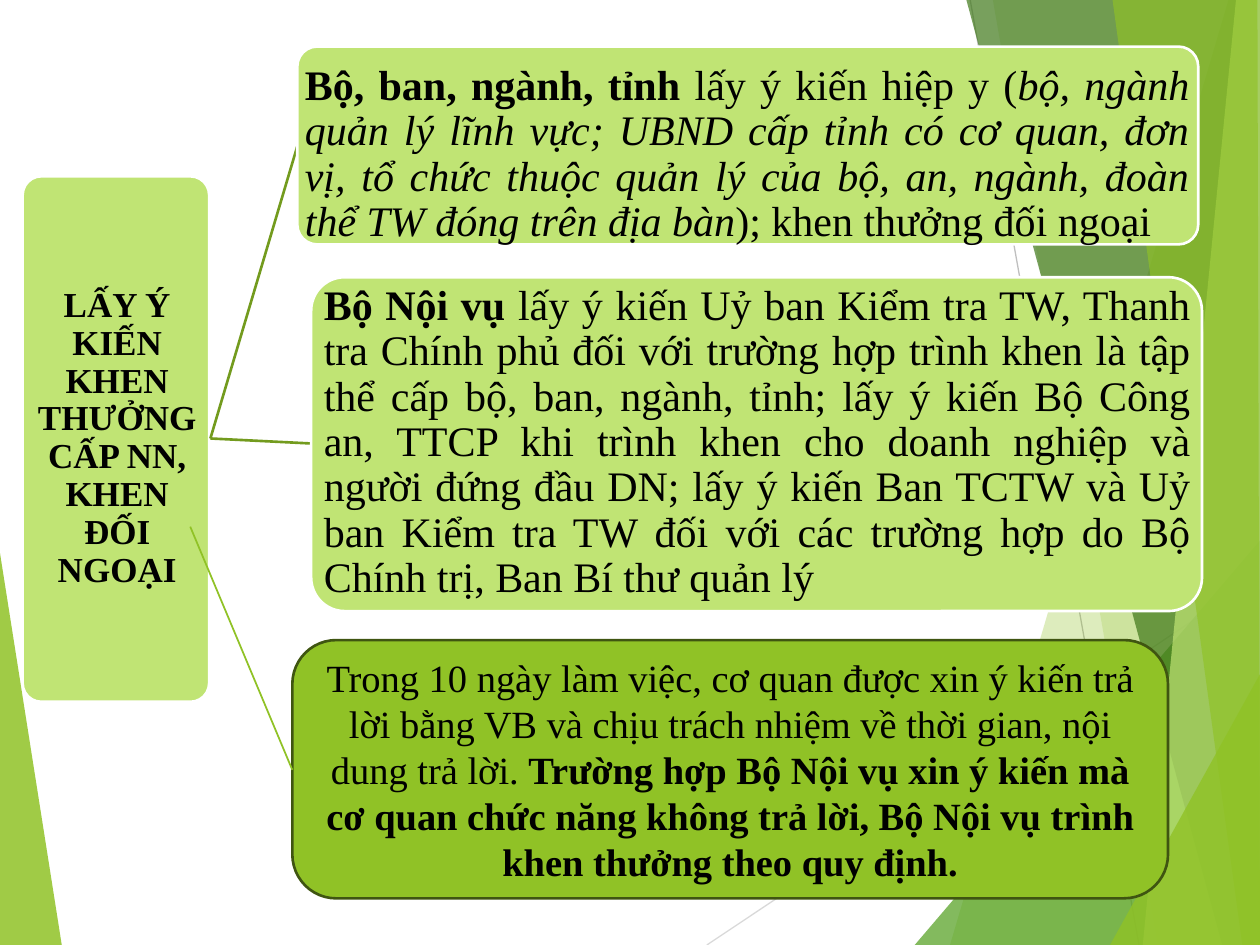
from lxml import etree
from pptx import Presentation
from pptx.dml.color import RGBColor
from pptx.enum.shapes import MSO_CONNECTOR as CONN, MSO_SHAPE as SHAPE
from pptx.enum.text import MSO_ANCHOR as ANCHOR, MSO_AUTO_SIZE as AUTO, PP_ALIGN as ALIGN
from pptx.oxml.ns import qn
from pptx.util import Inches, Pt

W, H = 10, 7.5
FONT = "Times New Roman"
C = {"green": "90C226", "light": "C0E474", "leaf": "54A021", "forest": "3F7819",
     "link": "739B1E", "edge": "3F5511", "white": "FFFFFF", "black": "000000",
     "gray": "BFBFBF", "pale": "D9D9D9"}

# Content: runs are (text, style), style "b" bold, "i" italic, "" regular
HEADING = [("LẤY Ý KIẾN KHEN THƯỞNG CẤP NN, KHEN ĐỐI NGOẠI", "b")]
MINISTRIES = [
    ("Bộ, ban, ngành, tỉnh ", "b"),
    ("lấy ý kiến hiệp y (", ""),
    ("bộ, ngành quản lý lĩnh vực; UBND cấp tỉnh có cơ quan, đơn vị, tổ chức thuộc "
     "quản lý của bộ, an, ngành, đoàn thể TW đóng trên địa bàn", "i"),
    ("); khen thưởng đối ngoại", ""),
]
HOME_AFFAIRS = [
    ("Bộ Nội vụ ", "b"),
    ("lấy ý kiến Uỷ ban Kiểm tra TW, Thanh tra Chính phủ đối với trường hợp trình "
     "khen là tập thể cấp bộ, ban, ngành, tỉnh; lấy ý kiến Bộ Công an, TTCP khi "
     "trình khen cho doanh nghiệp và người đứng đầu DN; lấy ý kiến Ban TCTW và Uỷ "
     "ban Kiểm tra TW đối với các trường hợp do Bộ Chính trị, Ban Bí thư quản lý", ""),
]
DEADLINE = [
    ("Trong 10 ngày làm việc, cơ quan được xin ý kiến trả lời bằng VB và chịu trách "
     "nhiệm về thời gian, nội dung trả lời. ", ""),
    ("Trường hợp Bộ Nội vụ xin ý kiến mà cơ quan chức năng không trả lời, Bộ Nội vụ "
     "trình khen thưởng theo quy định.", "b"),
]

# Background: thin rays (from, to, colour) and facets (points, colour, opacity %)
RAYS = [((5.61, H), (W, 4.57), "pale"), ((7.7, 0), (9.04, H), "gray")]
LEFT_FACET = ([(0, 4.39), (0.49, H), (0, H)], "green", 85)
RIGHT_FACETS = [
    ([(9.75, 0), (7.54, H), (W, H), (W, 0)], "green", 30),
    ([(7.88, 0), (9.19, H), (W, H), (W, 0)], "green", 20),
    ([(7.26, H), (W, 4.29), (W, H)], "leaf", 72),
    ([(7.67, 0), (9.7, H), (W, H), (W, 0)], "forest", 70),
    ([(9.81, 0), (9.07, H), (W, H), (W, 0)], "light", 70),
    ([(8.83, 0), (9.86, H), (W, H), (9.98, 0)], "green", 65),
    ([(8.81, H), (W, 5.35), (W, H)], "green", 80),
]

# Cards: box, corner, fill, line
CARDS = {
    "heading": ((0.18, 1.4, 1.48, 4.17), 0.1, "light", "white"),
    "ministries": ((2.36, 0.37, 7.15, 1.57), 0.1, "light", "white"),
    "home_affairs": ((2.47, 2.2, 7.07, 2.65), 0.1, "light", "white"),
    "deadline": ((2.32, 5.08, 6.95, 2.05), 0.17, "green", "edge"),
}
LINKS = [((1.67, 3.48), (2.36, 1.16), "link", 1.5),
         ((1.67, 3.48), (2.47, 3.52), "link", 1.5)]
DEADLINE_LINK = ((1.51, 4.18), (2.32, 6.11), "green", 1)


def rgb(name):
    return RGBColor.from_string(C[name])


def add_line(start, end, color, width):
    ln = shapes.add_connector(CONN.STRAIGHT, *map(Inches, start + end))
    ln.line.color.rgb = rgb(color)
    ln.line.width = Pt(width)
    etree.SubElement(ln._element.spPr, qn("a:effectLst"))


def add_facet(points, color, opacity):
    corners = [(Inches(x), Inches(y)) for x, y in points]
    fb = shapes.build_freeform(*corners[0])
    fb.add_line_segments(corners[1:], close=True)
    sp = fb.convert_to_shape()
    sp.shadow.inherit = False
    sp.fill.solid()
    sp.fill.fore_color.rgb = rgb(color)
    sp.line.fill.background()
    clr = sp._element.spPr.find(qn("a:solidFill"))[0]
    etree.SubElement(clr, qn("a:alpha"), val=str(opacity * 1000))


def add_card(box, corner, fill, line):
    sp = shapes.add_shape(SHAPE.ROUNDED_RECTANGLE, *map(Inches, box))
    sp.adjustments[0] = corner
    sp.shadow.inherit = False
    sp.fill.solid()
    sp.fill.fore_color.rgb = rgb(fill)
    sp.line.color.rgb = rgb(line)
    sp.line.width = Pt(1.5)
    return sp


def write(sp, runs, size=24, align=ALIGN.JUSTIFY, spacing=0.9, inset=0.02):
    tf = sp.text_frame
    tf.word_wrap = True
    tf.auto_size = AUTO.NONE
    tf.vertical_anchor = ANCHOR.MIDDLE
    tf.margin_left = tf.margin_right = tf.margin_top = tf.margin_bottom = Inches(inset)
    p = tf.paragraphs[0]
    p.alignment = align
    p.line_spacing = spacing
    for text, style in runs:
        r = p.add_run()
        r.text = text
        r.font.name = FONT
        r.font.size = Pt(size)
        r.font.color.rgb = rgb("black")
        r.font.bold = style == "b"
        r.font.italic = style == "i"


def place(sp, box):
    sp.left, sp.top, sp.width, sp.height = map(Inches, box)


prs = Presentation()
prs.slide_width, prs.slide_height = Inches(W), Inches(H)
slide = prs.slides.add_slide(prs.slide_layouts[5])
shapes = slide.shapes
title = shapes.title

# Background
add_facet(*LEFT_FACET)
for start, end, color in RAYS:
    add_line(start, end, color, 0.75)
for facet in RIGHT_FACETS:
    add_facet(*facet)

# Heading card, with the title lifted above it
add_card(*CARDS["heading"])
place(title, (0.23, 1.44, 1.4, 4.08))
write(title, HEADING, size=20, align=ALIGN.CENTER, inset=0.01)
shapes._spTree.append(title._element)

# Branches
for link in LINKS:
    add_line(*link)
for name, runs, box in [("ministries", MINISTRIES, (2.4, 0.49, 7.06, 1.48)),
                        ("home_affairs", HOME_AFFAIRS, (2.55, 2.27, 6.92, 2.49))]:
    add_card(*CARDS[name])
    write(shapes.add_textbox(*map(Inches, box)), runs)

# Deadline card
card = add_card(*CARDS["deadline"])
write(card, DEADLINE, size=22, align=ALIGN.CENTER, spacing=1.0, inset=0.1)
add_line(*DEADLINE_LINK)

prs.save("out.pptx")
